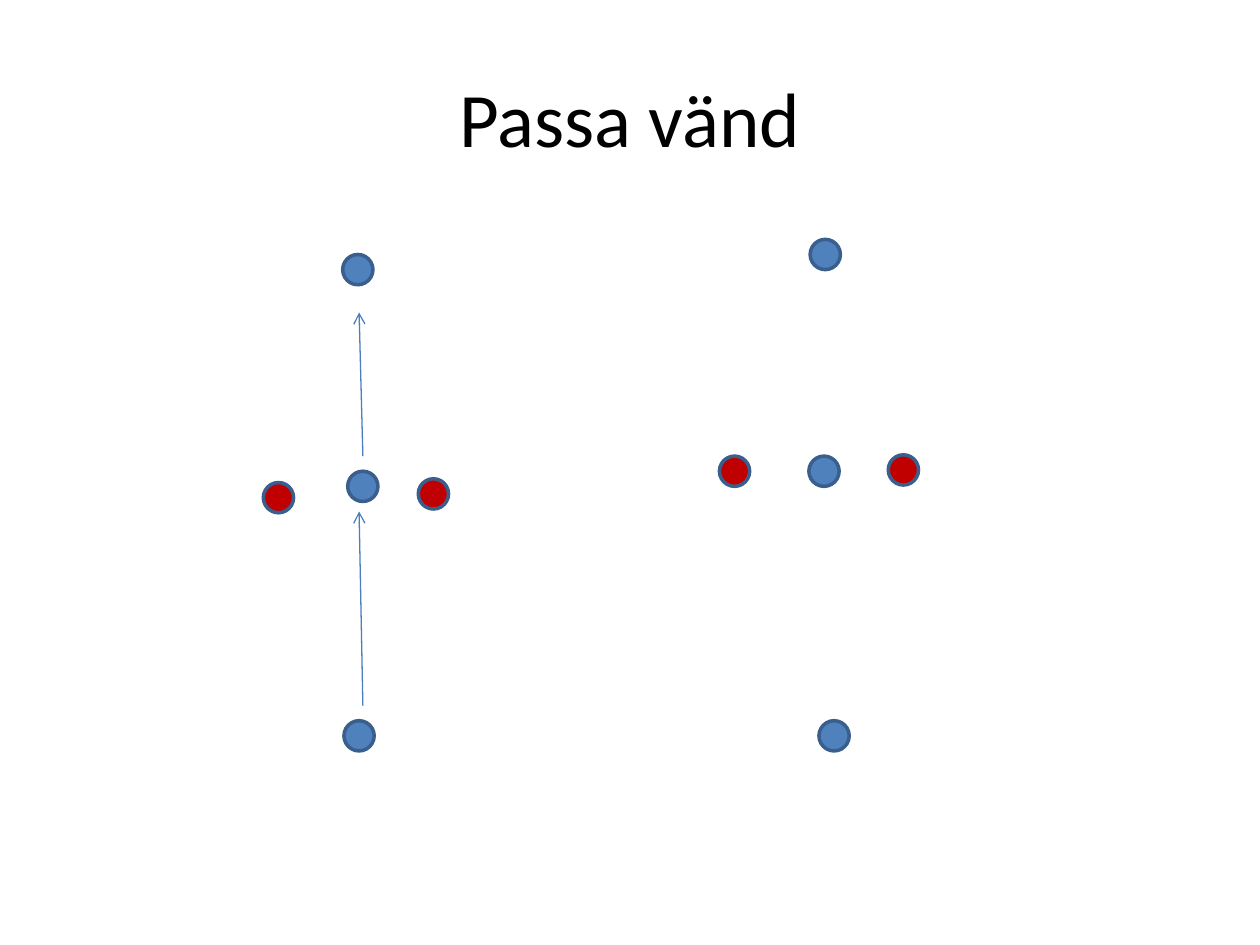
"""Build the "Passa vänd" passing drill slide."""
from lxml import etree
from pptx import Presentation, util as u
from pptx.dml.color import RGBColor
from pptx.enum import shapes, text
from pptx.oxml.ns import qn

HUES = {"blue": "4F81BD", "red": "C00000", "edge": "3A5F8C",
        "pass": "4B7EBC", "ink": "000000"}
SIZE = 0.24


def tint(name):
    return RGBColor.from_string(HUES[name])


def write(words, left, top, width, height, size=18, font="Calibri", hue="ink",
          align=text.PP_ALIGN.CENTER, anchor=text.MSO_ANCHOR.MIDDLE):
    box = slide.shapes.add_textbox(*map(u.Inches, (left, top, width, height)))
    frame = box.text_frame
    frame.word_wrap = True
    frame.vertical_anchor = anchor
    para = frame.paragraphs[0]
    para.alignment = align
    run = para.add_run()
    run.text = words
    run.font.size = u.Pt(size)
    run.font.name = font
    run.font.color.rgb = tint(hue)


deck = Presentation()
deck.slide_width = u.Inches(10)
deck.slide_height = u.Inches(7.5)
slide = deck.slides.add_slide(deck.slide_layouts[6])

write("Passa vänd", 0.5, 0.3, 9, 1.25, size=44)

players = {
    "blue": [(2.72, 2.02), (2.76, 3.74), (2.73, 5.72),
             (6.43, 1.9), (6.42, 3.62), (6.5, 5.72)],
    "red": [(2.09, 3.83), (3.32, 3.8), (5.71, 3.62), (7.05, 3.61)],
}
for team, spots in players.items():
    for left, top in spots:
        dot = slide.shapes.add_shape(
            shapes.MSO_SHAPE.OVAL, u.Inches(left), u.Inches(top),
            u.Inches(SIZE), u.Inches(SIZE))
        dot.shadow.inherit = False
        dot.fill.solid()
        dot.fill.fore_color.rgb = tint(team)
        dot.line.color.rgb = tint("edge")
        dot.line.width = u.Pt(2)

for start, end in [(5.6, 4.06), (3.62, 2.48)]:
    arrow = slide.shapes.add_connector(
        shapes.MSO_CONNECTOR.STRAIGHT, u.Inches(2.88), u.Inches(start),
        u.Inches(2.85), u.Inches(end))
    arrow.line.color.rgb = tint("pass")
    arrow.line.width = u.Pt(0.75)
    etree.SubElement(arrow.line._get_or_add_ln(), qn("a:tailEnd"), type="arrow")
    etree.SubElement(arrow._element.spPr, qn("a:effectLst"))

deck.save("out.pptx")
